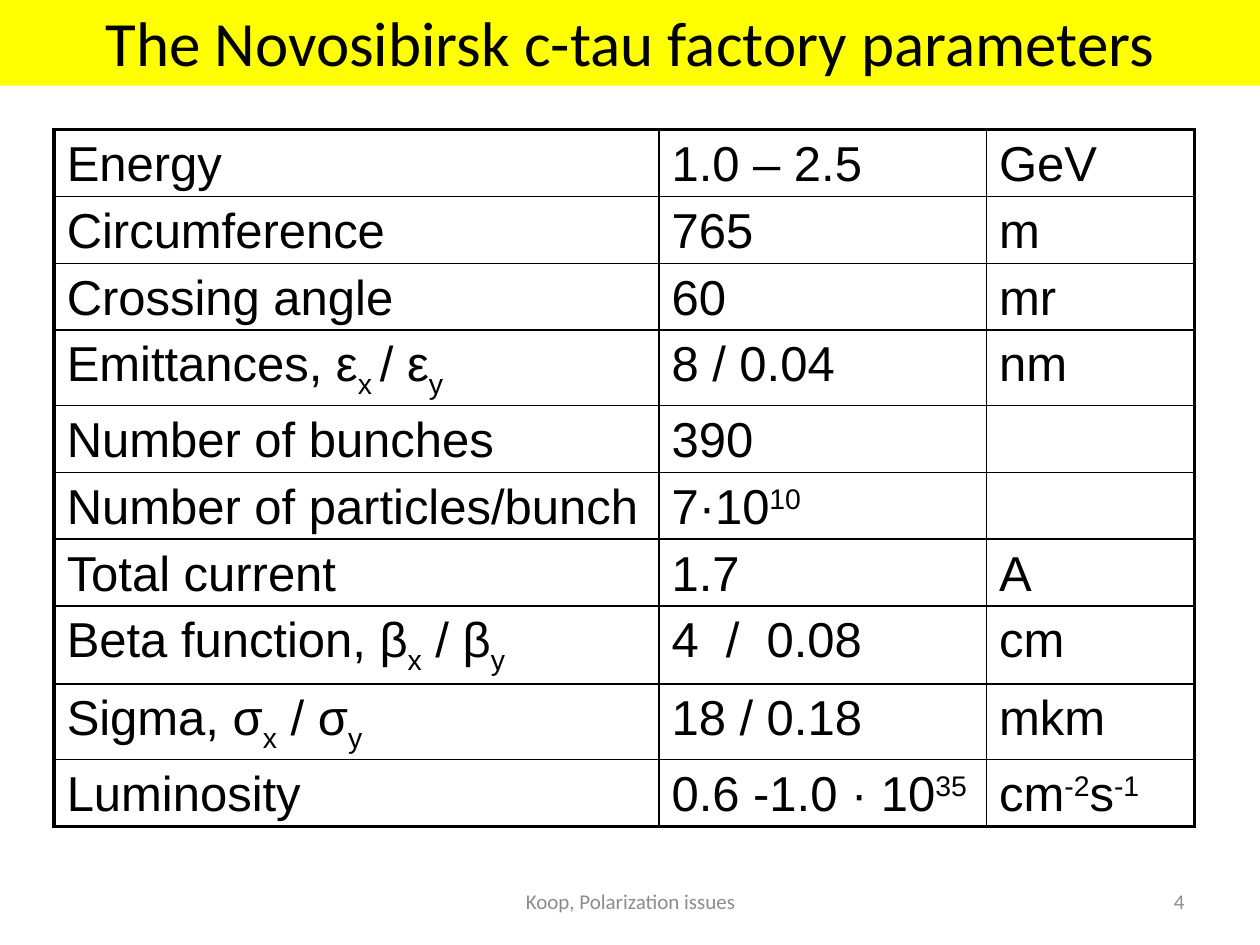
from lxml import etree
from pptx import Presentation
from pptx.dml.color import RGBColor
from pptx.enum import text
from pptx.oxml.ns import qn
from pptx.util import Inches, Pt

BASELINES = {"_": "-25000", "^": "30000"}

# Runs are parted by "|"; a leading _ or ^ marks a subscript or superscript.
PARAMETERS = [
    ("Energy", "1.0 – 2.5", "GeV"),
    ("Circumference", "765", "m"),
    ("Crossing angle", "60", "mr"),
    ("Emittances, ε|_x |/ ε|_y", "8 / 0.04", "nm"),
    ("Number of bunches", "390", ""),
    ("Number of particles/bunch", "7·10|^10", ""),
    ("Total current", "1.7", "A"),
    ("Beta function, β|_x| / β|_y", "4  /  0.08", "cm"),
    ("Sigma, σ|_x| / σ|_y", "18 / 0.18", "mkm"),
    ("Luminosity", "0.6 -1.0 · 10|^35", "cm|^-2|s|^-1"),
]
COLUMN_WIDTHS = [4.8, 2.6, 1.65]
ROW_HEIGHT = 0.53
TALL_ROWS = {3: 0.6, 7: 0.62, 8: 0.6}


def style(font, size, name, color):
    font.size = Pt(size)
    font.name = name
    font.color.rgb = RGBColor.from_string(color)


def add_border(cell, side, width):
    """Draw one black cell edge; side is L, R, T or B."""
    line = etree.SubElement(cell._tc.get_or_add_tcPr(), qn(f"a:ln{side}"), w=str(Pt(width)))
    fill = etree.SubElement(line, qn("a:solidFill"))
    etree.SubElement(fill, qn("a:srgbClr"), val="000000")


prs = Presentation()
prs.slide_width, prs.slide_height = Inches(10), Inches(7.5)
slide = prs.slides.add_slide(prs.slide_layouts[5])

title = slide.shapes.title
title.left, title.top = Inches(0), Inches(-0.02)
title.width, title.height = Inches(10), Inches(0.7)
title.fill.solid()
title.fill.fore_color.rgb = RGBColor.from_string("FFFF00")
title.text_frame.text = "The Novosibirsk c-tau factory parameters"
title.text_frame.vertical_anchor = text.MSO_ANCHOR.MIDDLE
heading = title.text_frame.paragraphs[0]
heading.alignment = text.PP_ALIGN.CENTER
style(heading.runs[0].font, 36, "Calibri", "000000")

heights = [TALL_ROWS.get(row, ROW_HEIGHT) for row in range(len(PARAMETERS))]
table = slide.shapes.add_table(
    len(PARAMETERS), len(COLUMN_WIDTHS), Inches(0.43), Inches(1.03),
    Inches(sum(COLUMN_WIDTHS)), Inches(sum(heights))).table
table.first_row = table.horz_banding = False
for column, width in zip(table.columns, COLUMN_WIDTHS):
    column.width = Inches(width)

last_row, last_column = len(PARAMETERS) - 1, len(COLUMN_WIDTHS) - 1
for r, parameter in enumerate(PARAMETERS):
    table.rows[r].height = Inches(heights[r])
    for c, content in enumerate(parameter):
        cell = table.cell(r, c)
        cell.margin_top, cell.margin_bottom = Inches(0.06), Inches(0.02)
        outer_edges = {"L": c == 0, "R": c == last_column, "T": r == 0, "B": r == last_row}
        for side, is_outer in outer_edges.items():
            add_border(cell, side, 2.25 if is_outer else 1)
        cell.fill.background()
        entry = cell.text_frame.paragraphs[0]
        style(entry.font, 28, "Arial", "000000")
        for part in content.split("|") if content else []:
            run = entry.add_run()
            run.text = part.lstrip("_^")
            style(run.font, 28, "Arial", "000000")
            if part[0] in BASELINES:
                run._r.get_or_add_rPr().set("baseline", BASELINES[part[0]])

footers = [
    ("Koop, Polarization issues", 3.42, 3.17, text.PP_ALIGN.CENTER),
    ("4", 7.17, 2.33, text.PP_ALIGN.RIGHT),
]
for words, left, width, alignment in footers:
    footer = slide.shapes.add_textbox(
        Inches(left), Inches(6.95), Inches(width), Inches(0.4)).text_frame
    footer.word_wrap = True
    footer.vertical_anchor = text.MSO_ANCHOR.MIDDLE
    footer.text = words
    footer.paragraphs[0].alignment = alignment
    style(footer.paragraphs[0].runs[0].font, 12, "Calibri", "8C8C8C")

prs.save("out.pptx")
